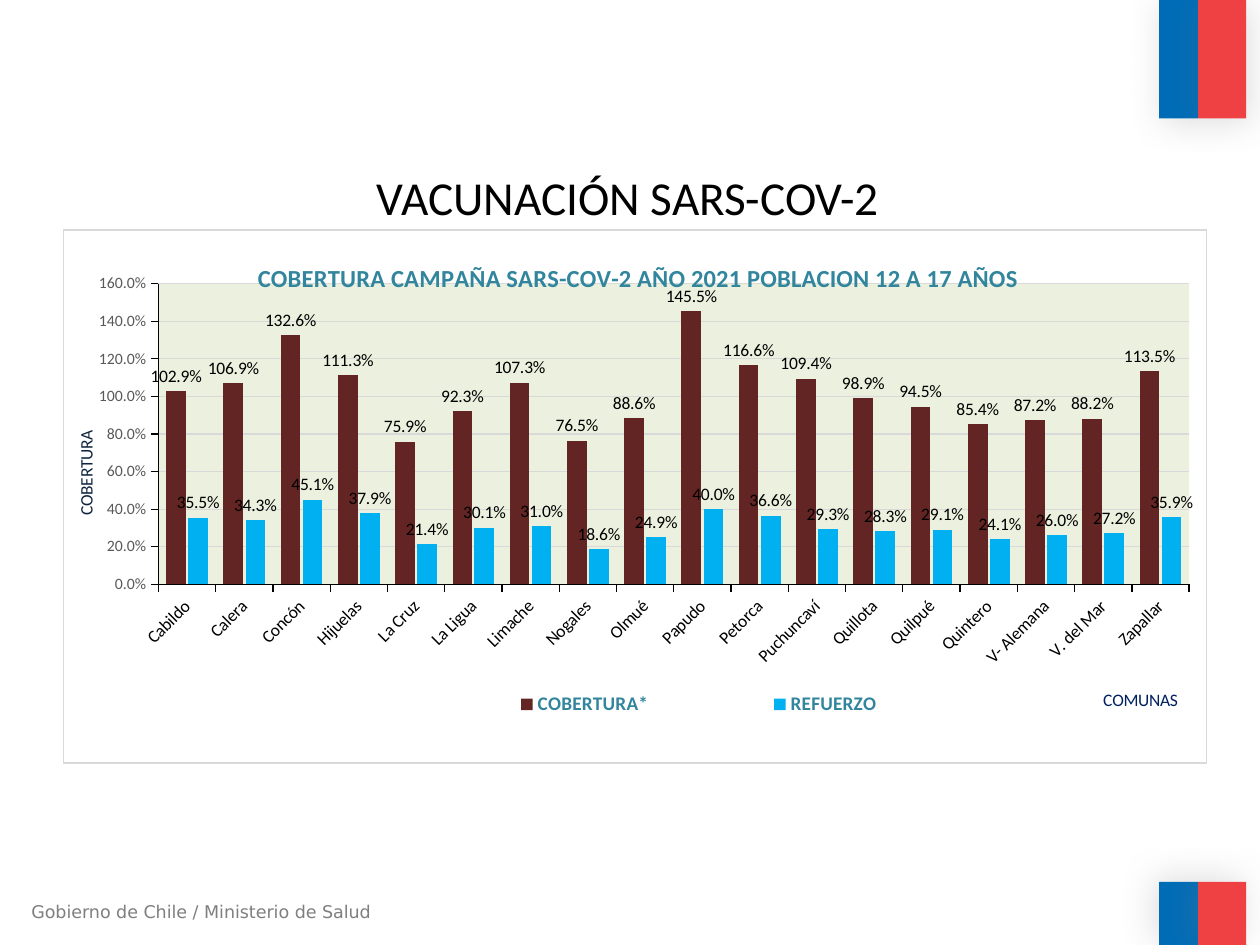
import dataclasses

import lxml.etree
import pptx
import pptx.chart.data
import pptx.dml.color
import pptx.enum.chart
import pptx.enum.shapes
import pptx.enum.text
import pptx.oxml
import pptx.oxml.ns
import pptx.util

Inches = pptx.util.Inches
Pt = pptx.util.Pt
qn = pptx.oxml.ns.qn


@dataclasses.dataclass(frozen=True)
class Theme:
    body: str = "Calibri"
    footer: str = "DejaVu Sans"
    black: str = "000000"
    white: str = "FFFFFF"
    gray: str = "7F7F7F"
    tick: str = "595959"
    grid: str = "D9D9D9"
    blue: str = "006CB7"
    red: str = "EF4144"
    shadow: str = "808080"
    teal: str = "31859C"
    navy: str = "002060"
    ink: str = "0F243E"
    plot: str = "EBF1DE"
    coverage: str = "632523"
    booster: str = "00B0F0"
    title_size: float = 27
    chart_title_size: float = 14
    legend_size: float = 11
    base_size: float = 10
    tick_size: float = 9


def rgb(color):
    return pptx.dml.color.RGBColor.from_string(color)


def set_font(font, name, size, color, bold=False):
    font.name = name
    font.size = Pt(size)
    font.bold = bold
    font.color.rgb = rgb(color)


def set_line(line, color):
    line.color.rgb = rgb(color)
    line.width = Pt(0.75)


def set_layout(parent, index, x, y, w=None, h=None, inner=False):
    for old in parent.findall(qn("c:layout")):
        parent.remove(old)
    layout = lxml.etree.Element(qn("c:layout"))
    manual = lxml.etree.SubElement(layout, qn("c:manualLayout"))
    values = [("layoutTarget", "inner")] if inner else []
    values += [("xMode", "edge"), ("yMode", "edge"), ("x", x), ("y", y)]
    if w is not None:
        values += [("w", w), ("h", h)]
    for tag, value in values:
        lxml.etree.SubElement(manual, qn("c:" + tag)).set("val", str(value))
    parent.insert(index, layout)


def area_format(fill, border=None):
    line = "<a:ln><a:noFill/></a:ln>"
    if border:
        line = f'<a:ln w="9525"><a:solidFill><a:srgbClr val="{border}"/></a:solidFill></a:ln>'
    return pptx.oxml.parse_xml(
        f'<c:spPr {pptx.oxml.ns.nsdecls("c", "a")}><a:solidFill>'
        f'<a:srgbClr val="{fill}"/></a:solidFill>{line}</c:spPr>')


class SlideBuilder:
    def __init__(self, slide, theme):
        self.s = slide
        self.theme = theme

    def block(self, x, y, w, h, color, angle):
        sp = self.s.shapes.add_shape(
            pptx.enum.shapes.MSO_SHAPE.RECTANGLE,
            Inches(x), Inches(y), Inches(w), Inches(h))
        sp.fill.solid()
        sp.fill.fore_color.rgb = rgb(color)
        sp.line.fill.background()
        sp.shadow.inherit = False
        effects = sp._element.spPr.find(qn("a:effectLst"))
        effects.append(pptx.oxml.parse_xml(
            f'<a:outerShdw {pptx.oxml.ns.nsdecls("a")} blurRad="{Pt(20)}" '
            f'dist="{Pt(3)}" dir="{angle * 60000}" rotWithShape="0">'
            f'<a:srgbClr val="{self.theme.shadow}"><a:alpha val="25000"/>'
            '</a:srgbClr></a:outerShdw>'))

    def text(self, x, y, w, h, text, font, size, color):
        sp = self.s.shapes.add_textbox(Inches(x), Inches(y), Inches(w), Inches(h))
        tf = sp.text_frame
        tf.word_wrap = False
        tf.auto_size = pptx.enum.text.MSO_AUTO_SIZE.SHAPE_TO_FIT_TEXT
        r = tf.paragraphs[0].add_run()
        r.text = text
        set_font(r.font, font, size, color)

    def chart_title(self, title, text, size, color, x, y, bold=False, rotation=0):
        tf = title.text_frame
        r = tf.paragraphs[0].add_run()
        r.text = text
        set_font(r.font, self.theme.body, size, color, bold)
        tf._txBody.find(qn("a:bodyPr")).set("rot", str(rotation * 60000))
        set_layout(title._element, 1, x, y)

    def axis(self, axis, size, color):
        axis.major_tick_mark = pptx.enum.chart.XL_TICK_MARK.OUTSIDE
        axis.minor_tick_mark = pptx.enum.chart.XL_TICK_MARK.NONE
        set_font(axis.tick_labels.font, self.theme.body, size, color)
        set_line(axis.format.line, self.theme.black)

    def chart(self, x, y, w, h, title, categories, series):
        t = self.theme
        data = pptx.chart.data.CategoryChartData(number_format="0.0%")
        data.categories = categories
        for name, values, color in series:
            data.add_series(name, [v / 100 for v in values])
        chart = self.s.shapes.add_chart(
            pptx.enum.chart.XL_CHART_TYPE.COLUMN_CLUSTERED,
            Inches(x), Inches(y), Inches(w), Inches(h), data).chart
        set_font(chart.font, t.body, t.base_size, t.black)
        chart.has_title = True
        self.chart_title(chart.chart_title, title, t.chart_title_size, t.teal,
                         0.166, 0.05, bold=True)

        plot = chart.plots[0]
        plot.gap_width = 79
        plot.overlap = -12
        plot.vary_by_categories = False
        for ser, (name, values, color) in zip(plot.series, series):
            ser.format.fill.solid()
            ser.format.fill.fore_color.rgb = rgb(color)
            labels = ser.data_labels
            labels.show_value = True
            labels.number_format = "0.0%"
            labels.number_format_is_linked = False
            labels.position = pptx.enum.chart.XL_LABEL_POSITION.OUTSIDE_END
            set_font(labels.font, t.body, t.base_size, t.black)

        cat, val = chart.category_axis, chart.value_axis
        self.axis(cat, t.base_size, t.black)
        cat._element.find(qn("c:txPr")).find(qn("a:bodyPr")).set("rot", str(-45 * 60000))
        self.chart_title(cat.axis_title, "COMUNAS", t.base_size, t.navy, 0.907, 0.855)
        self.axis(val, t.tick_size, t.tick)
        self.chart_title(val.axis_title, "COBERTURA", t.base_size, t.ink,
                         0.007, 0.37, rotation=-90)
        val.minimum_scale, val.maximum_scale, val.major_unit = 0, 1.6, 0.2
        val.tick_labels.number_format = "0.0%"
        val.tick_labels.number_format_is_linked = False
        val.has_major_gridlines = True
        set_line(val.major_gridlines.format.line, t.grid)

        chart.has_legend = True
        legend = chart.legend
        legend.position = pptx.enum.chart.XL_LEGEND_POSITION.BOTTOM
        legend.include_in_layout = False
        set_font(legend.font, t.body, t.legend_size, t.teal, bold=True)
        set_layout(legend._element, 1, 0.296, 0.86, 0.52, 0.06)

        root = chart._chartSpace
        area = root.find(qn("c:chart")).find(qn("c:plotArea"))
        set_layout(area, 0, 0.083, 0.101, 0.902, 0.564, inner=True)
        area.append(area_format(t.plot))
        root.find(qn("c:chart")).addnext(area_format(t.white, t.grid))


def main():
    prs = pptx.Presentation()
    prs.slide_width, prs.slide_height = Inches(10), Inches(7.5)
    t = Theme()
    b = SlideBuilder(prs.slides.add_slide(prs.slide_layouts[6]), t)

    for top, height, angle in [(0, 0.94, 45), (7, 0.5, 215)]:
        b.block(9.2, top, 0.31, height, t.blue, angle)
        b.block(9.51, top, 0.38, height, t.red, angle)
    b.text(0.15, 7.1, 3.02, 0.27, "Gobierno de Chile / Ministerio de Salud",
           t.footer, t.base_size, t.gray)
    b.text(2.89, 1.29, 4.21, 0.56, "VACUNACIÓN SARS-COV-2",
           t.body, t.title_size, t.black)

    communes = ["Cabildo", "Calera", "Concón", "Hijuelas", "La Cruz", "La Ligua",
                "Limache", "Nogales", "Olmué", "Papudo", "Petorca", "Puchuncaví",
                "Quillota", "Quilpué", "Quintero", "V- Alemana", "V. del Mar", "Zapallar"]
    coverage = [102.9, 106.9, 132.6, 111.3, 75.9, 92.3, 107.3, 76.5, 88.6,
                145.5, 116.6, 109.4, 98.9, 94.5, 85.4, 87.2, 88.2, 113.5]
    booster = [35.5, 34.3, 45.1, 37.9, 21.4, 30.1, 31.0, 18.6, 24.9,
               40.0, 36.6, 29.3, 28.3, 29.1, 24.1, 26.0, 27.2, 35.9]
    b.chart(0.5, 1.82, 9.08, 4.24,
            "COBERTURA CAMPAÑA SARS-COV-2 AÑO 2021 POBLACION 12 A 17 AÑOS", communes,
            [("COBERTURA*", coverage, t.coverage), ("REFUERZO", booster, t.booster)])
    prs.save("out.pptx")


if __name__ == "__main__":
    main()
